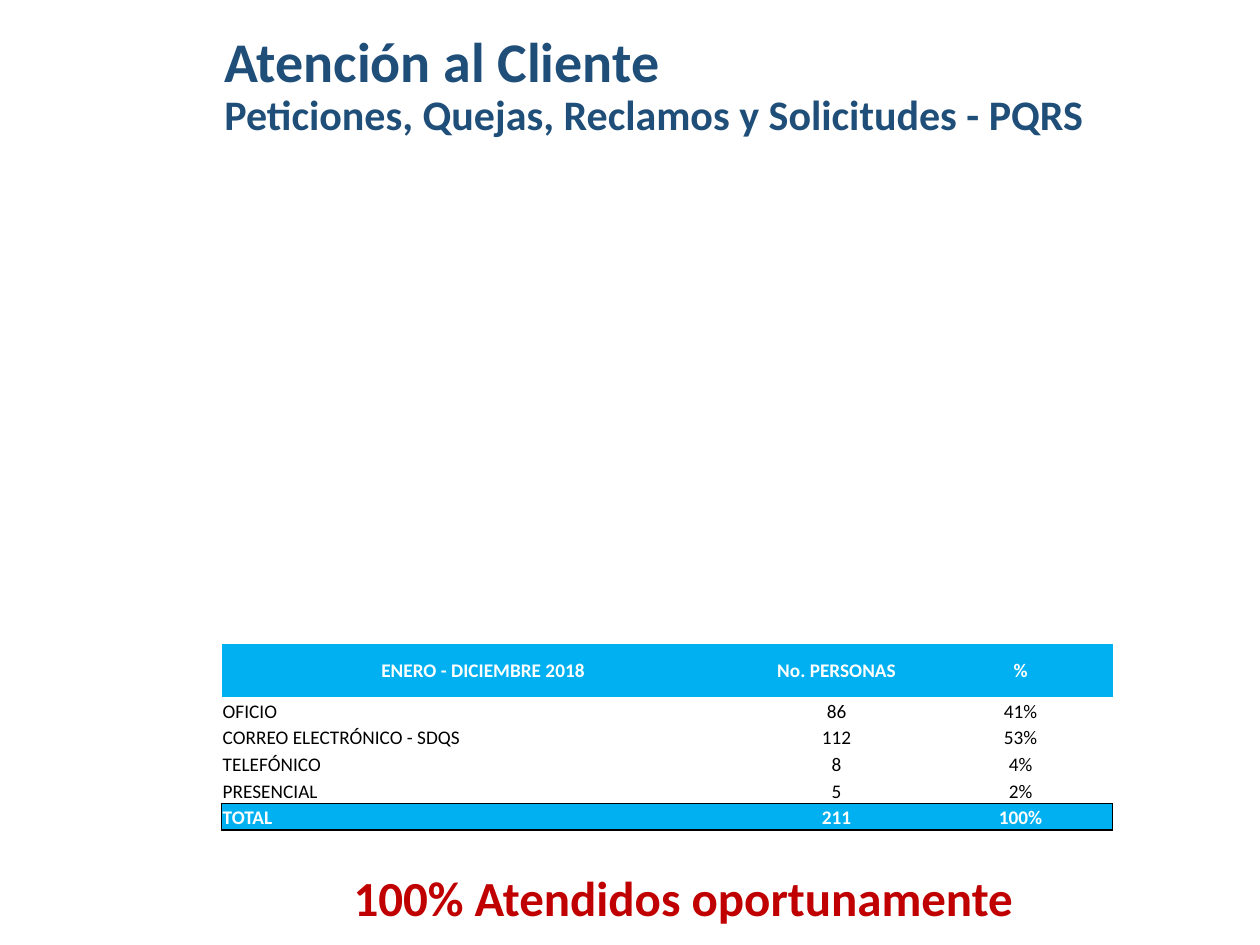
from dataclasses import dataclass

from pptx import Presentation
from pptx.dml.color import RGBColor as RGB
from pptx.enum.text import MSO_ANCHOR as Anchor, MSO_AUTO_SIZE as AutoSize, PP_ALIGN as Align
from pptx.oxml.ns import qn
from pptx.util import Cm, Pt
from lxml.etree import SubElement


@dataclass(frozen=True)
class Theme:
    """Colours, font and type sizes of the slide."""
    font: str = "Calibri"
    navy: str = "1F4E79"
    red: str = "C00000"
    sky: str = "00B0F0"
    white: str = "FFFFFF"
    black: str = "000000"
    title: int = 32
    subtitle: int = 24
    message: int = 28
    cell: int = 11


THEME = Theme()
NO_GRID = "{2D5ABB26-0587-4C30-8999-92F81FD0307C}"
TITLE = [("Atención al Cliente", THEME.title),
         ("Peticiones, Quejas, Reclamos y Solicitudes - PQRS", THEME.subtitle)]
ROWS = [
    ("ENERO - DICIEMBRE 2018", "No. PERSONAS", "%"),
    ("OFICIO", "86", "41%"),
    ("CORREO ELECTRÓNICO - SDQS", "112", "53%"),
    ("TELEFÓNICO", "8", "4%"),
    ("PRESENCIAL", "5", "2%"),
    ("TOTAL", "211", "100%"),
]


def set_all(obj, values):
    """Set each named attribute of an object."""
    for name, value in values.items():
        setattr(obj, name, value)


def write(p, text, size, color, bold=True, align=Align.LEFT):
    """Fill a paragraph with one formatted run."""
    p.alignment = align
    r = p.add_run()
    r.text = text
    set_all(r.font, {"name": THEME.font, "size": Pt(size), "bold": bold})
    r.font.color.rgb = RGB.from_string(color)


def add_title(s, left, top, width, height):
    """Place the title and subtitle in the title placeholder."""
    sp = s.shapes.title
    set_all(sp, {"left": Cm(left), "top": Cm(top), "width": Cm(width), "height": Cm(height)})
    tf = sp.text_frame
    set_all(tf, {"word_wrap": True, "auto_size": AutoSize.NONE,
                 "vertical_anchor": Anchor.BOTTOM})
    for i, (text, size) in enumerate(TITLE):
        p = tf.add_paragraph() if i else tf.paragraphs[0]
        set_all(p, {"line_spacing": 0.9, "space_before": Pt(0)})
        write(p, text, size, THEME.navy)


def add_borders(cell, sides):
    """Draw a thin black line on the given sides of a cell."""
    tc_pr = cell._tc.get_or_add_tcPr()
    for side in sides:
        ln = SubElement(tc_pr, qn(f"a:ln{side}"), w=str(Pt(1)))
        fill = SubElement(ln, qn("a:solidFill"))
        SubElement(fill, qn("a:srgbClr"), val=THEME.black)


def add_channel_table(s, left, top, width, height):
    """Place the table of requests by channel, with an outlined total row."""
    last_row, last_col = len(ROWS) - 1, len(ROWS[0]) - 1
    table = s.shapes.add_table(len(ROWS), len(ROWS[0]), Cm(left), Cm(top),
                               Cm(width), Cm(height)).table
    table._tbl.tblPr.find(qn("a:tableStyleId")).text = NO_GRID
    number_width, header_height = 3.71, 1.07
    for j, col in enumerate(table.columns):
        col.width = Cm(number_width if j else width - last_col * number_width)
    for i, row in enumerate(table.rows):
        row.height = Cm((height - header_height) / last_row if i else header_height)
        strong = i in (0, last_row)
        for j, cell in enumerate(row.cells):
            if i == last_row:
                add_borders(cell, ["L"] * (j == 0) + ["R"] * (j == last_col) + ["T", "B"])
            elif i == last_row - 1:
                add_borders(cell, ["B"])
            cell.fill.solid()
            cell.fill.fore_color.rgb = RGB.from_string(THEME.sky if strong else THEME.white)
            set_all(cell, {"margin_left": Cm(0.02), "margin_right": Cm(0.02),
                           "margin_top": Cm(0.02), "margin_bottom": 0,
                           "vertical_anchor": Anchor.BOTTOM if i else Anchor.MIDDLE})
            write(cell.text_frame.paragraphs[0], ROWS[i][j], THEME.cell,
                  THEME.white if strong else THEME.black, strong,
                  Align.CENTER if j or not i else Align.LEFT)


def add_message(s, left, top, width, height):
    """Place the closing message under the table."""
    tf = s.shapes.add_textbox(Cm(left), Cm(top), Cm(width), Cm(height)).text_frame
    set_all(tf, {"word_wrap": True, "auto_size": AutoSize.SHAPE_TO_FIT_TEXT})
    write(tf.paragraphs[0], "100% Atendidos oportunamente", THEME.message, THEME.red)


def main():
    """Build the slide and save it."""
    prs = Presentation()
    set_all(prs, {"slide_width": Cm(25.4), "slide_height": Cm(19.05)})
    s = prs.slides.add_slide(prs.slide_layouts[5])
    add_title(s, 4.27, 0.33, 19.53, 2.62)
    add_message(s, 6.88, 17.37, 16.64, 1.45)
    add_channel_table(s, 4.47, 12.98, 17.96, 3.76)
    prs.save("out.pptx")


if __name__ == "__main__":
    main()
